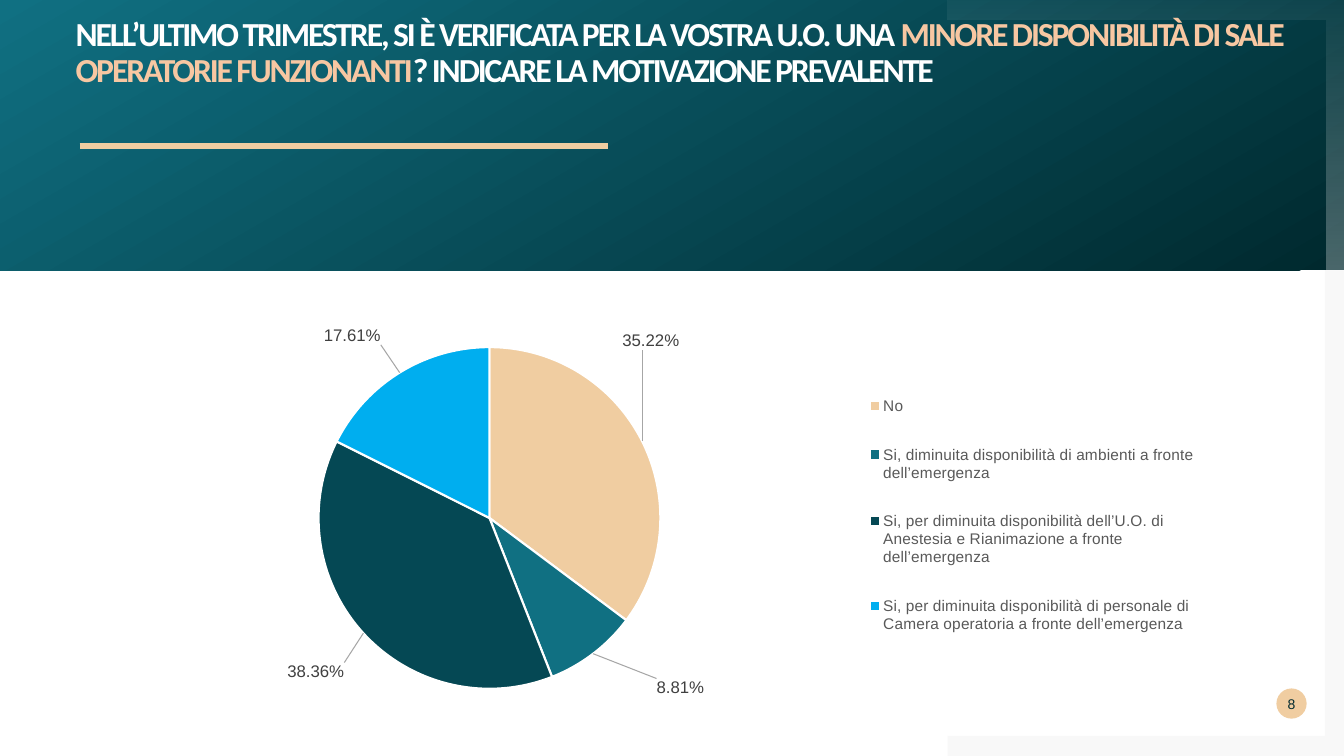
"""Build the survey slide on the reduced availability of operating rooms."""
from copy import deepcopy
from dataclasses import dataclass
from typing import Any

from lxml import etree
from pptx import Presentation
from pptx import util as u
from pptx.chart.data import CategoryChartData
from pptx.dml.color import RGBColor
from pptx.enum import chart as charts
from pptx.enum import shapes, text
from pptx.oxml import parse_xml
from pptx.oxml.ns import nsdecls, qn


@dataclass(frozen=True)
class Theme:
    """Colours, fonts and type sizes."""

    white: str = "FFFFFF"
    sand: str = "F0CDA1"
    peach: str = "F7C7A2"
    teal: str = "107082"
    night: str = "00292E"
    petrol: str = "054854"
    sky: str = "00AEEF"
    grey: str = "808080"
    leader_grey: str = "A6A6A6"
    label_grey: str = "404040"
    legend_grey: str = "595959"
    title_font: str = "Calibri"
    body_font: str = "Arial"
    title_size: float = 24
    label_size: float = 12
    legend_size: float = 11
    number_size: float = 10


THEME = Theme()


@dataclass(frozen=True)
class Answer:
    """A slice of the pie, with the shift of its label as a share of the chart."""

    name: str
    percent: float
    color: str
    shift: tuple[float, float]


@dataclass(frozen=True)
class Stop:
    """A gradient stop with its opacity in percent."""

    color: str
    opacity: int = 100


ANSWERS = [
    Answer("No", 35.22, THEME.sand, (-0.024, -0.203)),
    Answer("Si, diminuita disponibilità di ambienti a fronte dell’emergenza",
           8.81, THEME.teal, (0.057, 0.046)),
    Answer("Si, per diminuita disponibilità dell’U.O. di Anestesia e Rianimazione "
           "a fronte dell’emergenza", 38.36, THEME.petrol, (-0.014, 0.058)),
    Answer("Si, per diminuita disponibilità di personale di Camera operatoria "
           "a fronte dell’emergenza", 17.61, THEME.sky, (-0.015, -0.052)),
]
TITLE = [
    ("NELL’ULTIMO TRIMESTRE, SI È VERIFICATA PER LA VOSTRA U.O. UNA ", THEME.white),
    ("MINORE DISPONIBILITÀ DI SALE OPERATORIE FUNZIONANTI", THEME.peach),
    ("? INDICARE LA MOTIVAZIONE PREVALENTE", THEME.white),
]
LOWER_FRAME = [(13.14, 2.68), (13.33, 2.68), (13.33, 7.5), (9.4, 7.5), (9.4, 7.3), (13.14, 7.3)]
UPPER_FRAME = [(9.4, 0), (13.33, 0), (13.33, 2.68), (13.14, 2.68), (13.14, 0.2), (9.4, 0.2)]


def rgb(color: str) -> RGBColor:
    """Turn a hex string into a colour."""
    return RGBColor.from_string(color)


def set_font(font: Any, *, name: str, size: float, color: str, bold: bool = False) -> None:
    """Format a font."""
    font.name, font.size, font.bold = name, u.Pt(size), bold
    font.color.rgb = rgb(color)


def write(paragraph: Any, content: str, *, spacing: float = 0, **format: Any) -> None:
    """Add a formatted run with its letter spacing in points."""
    run = paragraph.add_run()
    run.text = content
    set_font(run.font, **format)
    if spacing:
        run.font._element.set("spc", str(round(spacing * 100)))


def paint(shape: Any, stops: list[Stop], angle: float = 0) -> None:
    """Fill a shape with one colour or a two-stop gradient, without outline or shadow."""
    shape.shadow.inherit = False
    shape.line.fill.background()
    if len(stops) == 1:
        shape.fill.solid()
        shape.fill.fore_color.rgb = rgb(stops[0].color)
    else:
        shape.fill.gradient()
        shape.fill.gradient_angle = angle
        for gradient_stop, stop in zip(shape.fill.gradient_stops, stops):
            gradient_stop.color.rgb = rgb(stop.color)
    for element, stop in zip(shape._element.spPr.iter(qn("a:srgbClr")), stops):
        if stop.opacity < 100:
            etree.SubElement(element, qn("a:alpha"), val=str(stop.opacity * 1000))


def add_block(slide: Any, kind: Any, box: tuple[float, ...], stops: list[Stop],
              angle: float = 0) -> Any:
    """Add a painted preset shape."""
    shape = slide.shapes.add_shape(kind, *map(u.Inches, box))
    paint(shape, stops, angle)
    return shape


def add_frame(slide: Any, points: list[tuple[float, float]], stops: list[Stop],
              angle: float = 0) -> None:
    """Add a painted outline through points in inches."""
    corners = [(u.Inches(x), u.Inches(y)) for x, y in points]
    builder = slide.shapes.build_freeform(*corners[0])
    builder.add_line_segments(corners[1:], close=True)
    paint(builder.convert_to_shape(), stops, angle)


def clear_margins(frame: Any) -> None:
    """Remove the margins of a text frame."""
    frame.margin_left = frame.margin_right = frame.margin_top = frame.margin_bottom = 0


def add_title(slide: Any) -> None:
    """Add the question and the rule under it."""
    box = slide.shapes.add_textbox(*map(u.Inches, (0.75, 0.17, 12.21, 1.18)))
    clear_margins(box.text_frame)
    box.text_frame.word_wrap = True
    paragraph = box.text_frame.paragraphs[0]
    paragraph.line_spacing = 0.9
    for content, color in TITLE:
        write(paragraph, content, name=THEME.title_font, size=THEME.title_size,
              color=color, bold=True, spacing=-1.5)
    rule = slide.shapes.add_connector(
        shapes.MSO_CONNECTOR.STRAIGHT, *map(u.Inches, (0.79, 1.45, 6.03, 1.45)))
    rule.line.color.rgb = rgb(THEME.sand)
    rule.line.width = u.Pt(4.32)
    etree.SubElement(rule._element.spPr, qn("a:effectLst"))


def add_page_number(slide: Any, number: str) -> None:
    """Add the page number in its disc."""
    disc = add_block(slide, shapes.MSO_SHAPE.OVAL, (12.66, 6.83, 0.3, 0.3), [Stop(THEME.sand)])
    clear_margins(disc.text_frame)
    disc.text_frame.vertical_anchor = text.MSO_ANCHOR.MIDDLE
    paragraph = disc.text_frame.paragraphs[0]
    paragraph.alignment = text.PP_ALIGN.CENTER
    write(paragraph, number, name=THEME.body_font, size=THEME.number_size, color=THEME.night)


def layout(**values: Any) -> Any:
    """Make a manual chart layout."""
    items = "".join(f'<c:{key} val="{value}"/>' for key, value in values.items())
    return parse_xml(f'<c:layout {nsdecls("c")}><c:manualLayout>{items}</c:manualLayout></c:layout>')


def add_labels(series: Any) -> None:
    """Label the slices with percentages, moved away from the pie on leader lines."""
    labels = series.data_labels
    labels.show_percentage, labels.show_value = True, False
    labels.number_format, labels.number_format_is_linked = "0.00%", False
    labels.position = charts.XL_LABEL_POSITION.OUTSIDE_END
    set_font(labels.font, name=THEME.body_font, size=THEME.label_size, color=THEME.label_grey)
    group = labels._element
    for leader in group.findall(qn("c:showLeaderLines")):
        group.remove(leader)
    shared = list(group)
    for index, answer in enumerate(ANSWERS):
        label = parse_xml(f'<c:dLbl {nsdecls("c")}><c:idx val="{index}"/></c:dLbl>')
        label.append(layout(x=answer.shift[0], y=answer.shift[1]))
        label.extend(deepcopy(shared))
        group.insert(index, label)
    etree.SubElement(group, qn("c:showLeaderLines"), val="1")
    group.append(parse_xml(
        f'<c:leaderLines {nsdecls("c", "a")}><c:spPr><a:ln w="9525"><a:solidFill>'
        f'<a:srgbClr val="{THEME.leader_grey}"/></a:solidFill></a:ln></c:spPr></c:leaderLines>'))


def add_pie(slide: Any) -> None:
    """Add the pie of answers with its legend."""
    data = CategoryChartData()
    data.categories = [answer.name for answer in ANSWERS]
    data.add_series("Series 1", [answer.percent for answer in ANSWERS])
    chart = slide.shapes.add_chart(
        charts.XL_CHART_TYPE.PIE, *map(u.Inches, (1.64, 2.98, 10.42, 4.34)), data).chart
    chart.has_title = False
    chart.font.name, chart.font.size = THEME.body_font, u.Pt(THEME.number_size)
    chart.has_legend = True
    legend = chart.legend
    legend.position = charts.XL_LEGEND_POSITION.RIGHT
    legend.include_in_layout = False
    set_font(legend.font, name=THEME.body_font, size=THEME.legend_size, color=THEME.legend_grey)
    legend._element.find(qn("c:legendPos")).addnext(
        layout(xMode="edge", yMode="edge", x=0.66, y=0.15, w=0.33, h=0.68))
    plot_area = chart._chartSpace.chart.plotArea
    for automatic in plot_area.findall(qn("c:layout")):
        plot_area.remove(automatic)
    plot_area.insert(0, layout(layoutTarget="inner", xMode="edge", yMode="edge",
                               x=0.055, y=0.107, w=0.507, h=0.781))
    series = chart.plots[0].series[0]
    for index, answer in enumerate(ANSWERS):
        point = series.points[index].format
        point.fill.solid()
        point.fill.fore_color.rgb = rgb(answer.color)
        point.line.color.rgb = rgb(THEME.white)
        point.line.width = u.Pt(1.5)
    add_labels(series)


def main() -> None:
    """Build and save the slide."""
    presentation = Presentation()
    presentation.slide_width, presentation.slide_height = u.Inches(13.33), u.Inches(7.5)
    slide = presentation.slides.add_slide(presentation.slide_layouts[6])
    add_frame(slide, LOWER_FRAME, [Stop(THEME.grey, 5)])
    add_block(slide, shapes.MSO_SHAPE.RECTANGLE, (0, 0, 13.33, 2.68),
              [Stop(THEME.night), Stop(THEME.teal)], 120)
    add_frame(slide, UPPER_FRAME, [Stop(THEME.white, 5), Stop(THEME.white, 30)], 270)
    add_title(slide)
    add_page_number(slide, "8")
    add_pie(slide)
    presentation.save("out.pptx")


if __name__ == "__main__":
    main()
